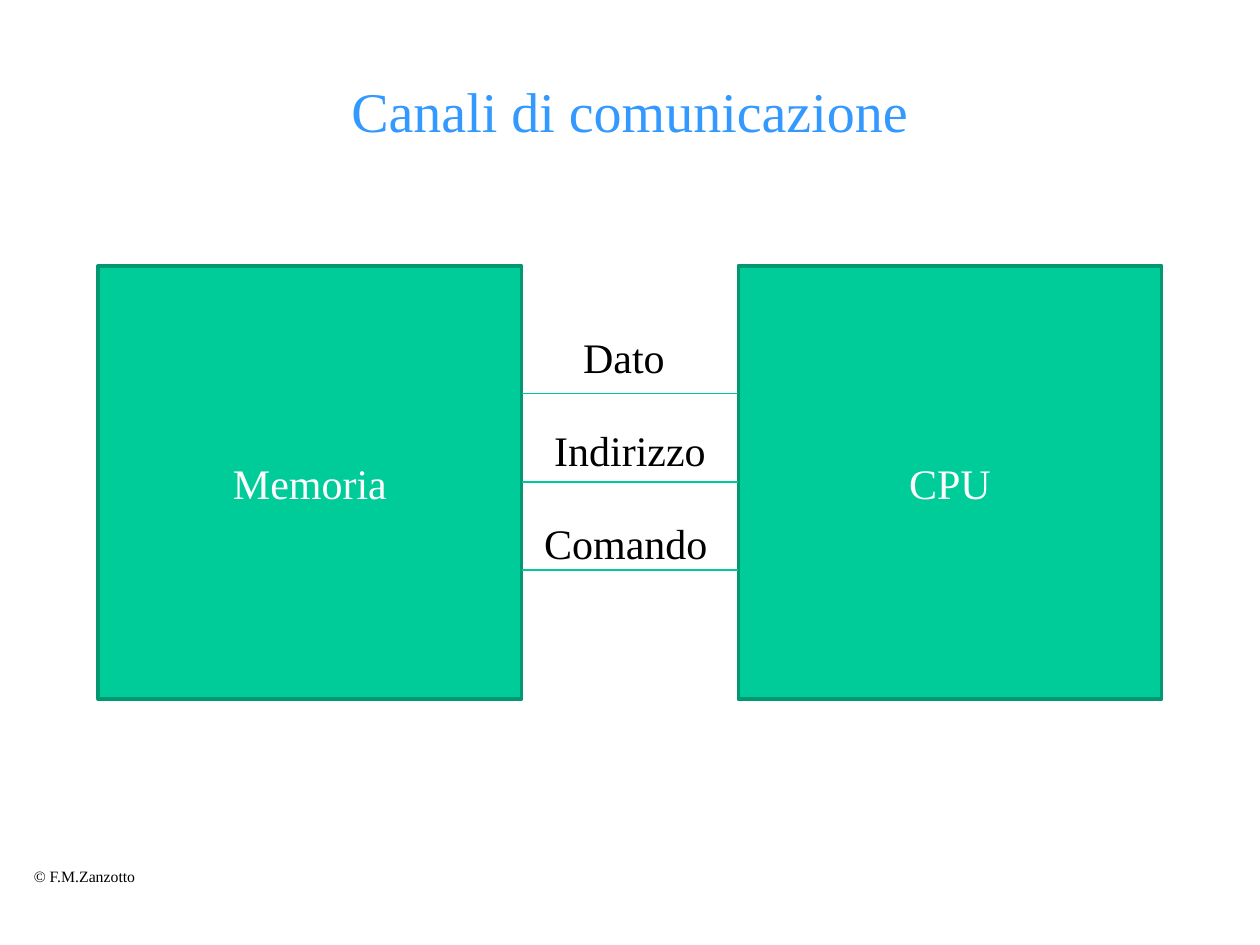
"""Build a slide on the channels between memory and CPU."""
from pptx import Presentation
from pptx.dml.color import RGBColor
from pptx.enum import shapes, text
from pptx.oxml.ns import qn
from pptx.util import Inches, Pt
from lxml import etree

WHITE = RGBColor(0xFF, 0xFF, 0xFF)
BLACK = RGBColor(0, 0, 0)
BLUE = RGBColor(0x33, 0x99, 0xFF)
GREEN = RGBColor(0x00, 0xCC, 0x99)
EDGE = RGBColor(0x00, 0x97, 0x71)
WIRE = RGBColor(0x00, 0xC8, 0x96)


def write(frame, words, size, color, align=text.PP_ALIGN.LEFT):
    par = frame.paragraphs[0]
    par.text = words
    par.alignment = align
    par.font.name = "Times New Roman"
    par.font.size = Pt(size)
    par.font.color.rgb = color


def label(words, left, top, width, height, size):
    box = slide.shapes.add_textbox(
        Inches(left), Inches(top), Inches(width), Inches(height))
    box.text_frame.word_wrap = False
    box.text_frame.auto_size = text.MSO_AUTO_SIZE.SHAPE_TO_FIT_TEXT
    write(box.text_frame, words, size, BLACK)


deck = Presentation()
deck.slide_width, deck.slide_height = Inches(10), Inches(7.5)
slide = deck.slides.add_slide(deck.slide_layouts[6])

label("© F.M.Zanzotto", 0.17, 6.83, 1.02, 0.25, 9)

title = slide.shapes.add_textbox(
    Inches(0.75), Inches(0.5), Inches(8.5), Inches(0.75))
title.text_frame.word_wrap = True
title.text_frame.vertical_anchor = text.MSO_ANCHOR.MIDDLE
write(title.text_frame, "Canali di comunicazione", 32, BLUE,
      text.PP_ALIGN.CENTER)

for name, left in (("Memoria", 0.78), ("CPU", 5.86)):
    block = slide.shapes.add_shape(
        shapes.MSO_SHAPE.RECTANGLE,
        Inches(left), Inches(2.11), Inches(3.36), Inches(3.44))
    block.shadow.inherit = False
    block.fill.solid()
    block.fill.fore_color.rgb = GREEN
    block.line.color.rgb = EDGE
    block.line.width = Pt(2)
    block.text_frame.vertical_anchor = text.MSO_ANCHOR.MIDDLE
    write(block.text_frame, name, 24, WHITE, text.PP_ALIGN.CENTER)

buses = (("Dato", 4.53, 0.86), ("Indirizzo", 4.3, 1.41), ("Comando", 4.22, 1.51))
for row, (name, left, width) in enumerate(buses):
    y = Inches(3.125 + 0.7 * row)
    wire = slide.shapes.add_connector(
        shapes.MSO_CONNECTOR.STRAIGHT, Inches(4.14), y, Inches(5.86), y)
    wire.line.color.rgb = WIRE
    wire.line.width = Pt(0.75)
    etree.SubElement(wire.element.spPr, qn("a:effectLst"))
    label(name, left, 2.58 + 0.74 * row, width, 0.51, 24)

deck.save("out.pptx")
